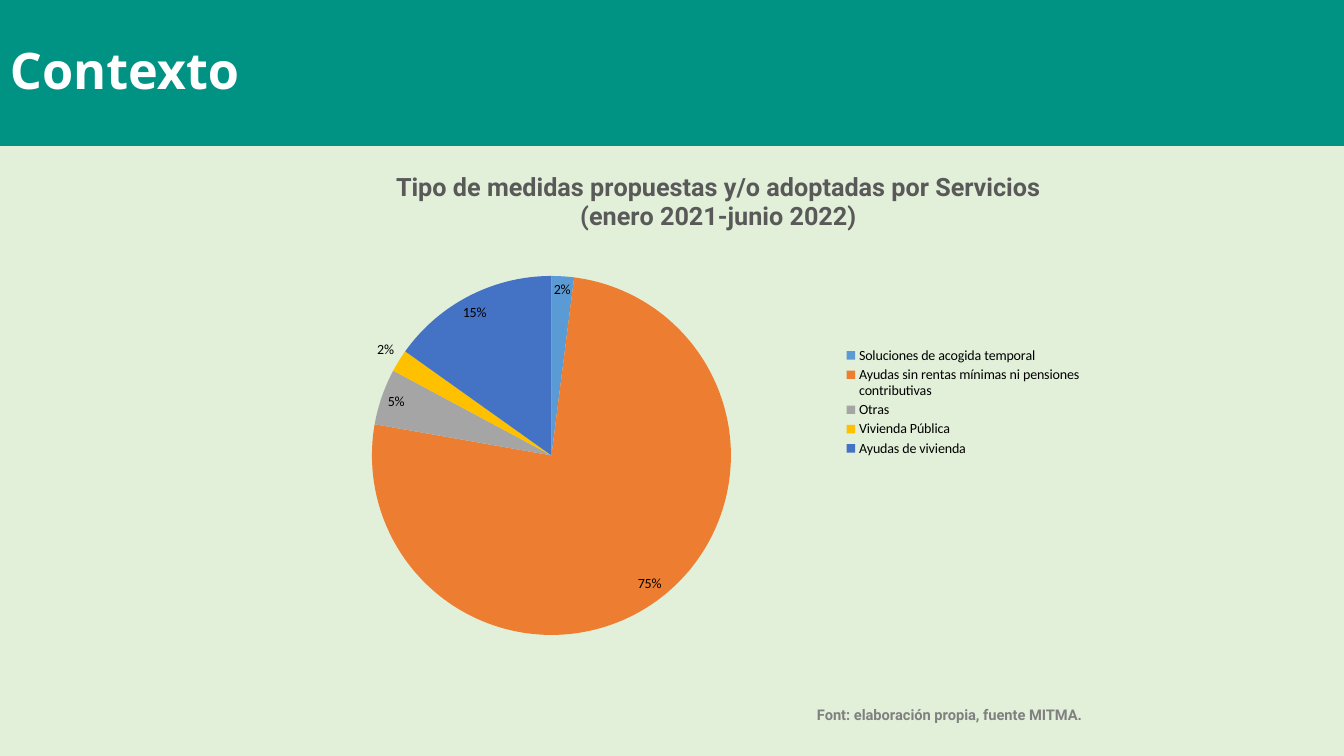
from lxml import etree
from pptx import Presentation
from pptx.chart.data import CategoryChartData
from pptx.dml.color import RGBColor
from pptx.enum.chart import XL_CHART_TYPE, XL_LABEL_POSITION, XL_LEGEND_POSITION
from pptx.enum.shapes import MSO_SHAPE
from pptx.enum.text import MSO_ANCHOR, PP_ALIGN
from pptx.oxml.ns import qn
from pptx.util import Emu, Pt

PIE = XL_CHART_TYPE.PIE
BEST_FIT = XL_LABEL_POSITION.BEST_FIT
RIGHT = XL_LEGEND_POSITION.RIGHT
RECTANGLE = MSO_SHAPE.RECTANGLE
MIDDLE = MSO_ANCHOR.MIDDLE
LEFT, CENTER = PP_ALIGN.LEFT, PP_ALIGN.CENTER

PALE_GREEN = RGBColor(0xE2, 0xF0, 0xD9)
TEAL = RGBColor(0x00, 0x93, 0x83)
WHITE = RGBColor(0xFF, 0xFF, 0xFF)
BLACK = RGBColor(0x00, 0x00, 0x00)
GRAY = RGBColor(0x80, 0x80, 0x80)
DARK_GRAY = RGBColor(0x59, 0x59, 0x59)
BLUE = RGBColor(0x5B, 0x9B, 0xD5)
ORANGE = RGBColor(0xED, 0x7D, 0x31)
SILVER = RGBColor(0xA5, 0xA5, 0xA5)
YELLOW = RGBColor(0xFF, 0xC0, 0x00)
ROYAL_BLUE = RGBColor(0x44, 0x72, 0xC4)

SLIDE_W, SLIDE_H = 1344, 756
CHART_X, CHART_Y, CHART_W, CHART_H = 255, 156, 834, 492
EMU_PER_PX = 12192000 / SLIDE_W

MEASURES = [
    ("Soluciones de acogida temporal", 2, BLUE),
    ("Ayudas sin rentas mínimas ni pensiones contributivas", 75, ORANGE),
    ("Otras", 5, SILVER),
    ("Vivienda Pública ", 2, YELLOW),
    ("Ayudas de vivienda", 15, ROYAL_BLUE),
]


def px(*lengths):
    return [Emu(round(length * EMU_PER_PX)) for length in lengths]


def write(frame, text, font, size, color, align=LEFT, spacing=None):
    for index, line in enumerate(text.split("\n")):
        paragraph = frame.add_paragraph() if index else frame.paragraphs[0]
        paragraph.alignment = align
        paragraph.line_spacing = spacing
        run = paragraph.add_run()
        run.text = line
        run.font.name = font
        run.font.size = Pt(size)
        run.font.bold = True
        run.font.color.rgb = color


deck = Presentation()
deck.slide_width, deck.slide_height = px(SLIDE_W, SLIDE_H)
slide = deck.slides.add_slide(deck.slide_layouts[6])
slide.background.fill.solid()
slide.background.fill.fore_color.rgb = PALE_GREEN

heading = slide.shapes.add_shape(RECTANGLE, *px(0, 0, SLIDE_W, 146))
heading.shadow.inherit = False
heading.fill.solid()
heading.fill.fore_color.rgb = TEAL
heading.line.fill.background()
heading.text_frame.vertical_anchor = MIDDLE
write(heading.text_frame, "Contexto", "Open Sans", 36, WHITE, spacing=0.9)

source_note = slide.shapes.add_textbox(*px(807, 701, 318, 28)).text_frame
source_note.word_wrap = True
write(source_note, "Font: elaboración propia, fuente MITMA.", "Roboto", 10.5, GRAY)

names, shares, colors = zip(*MEASURES)
data = CategoryChartData(number_format='0"%"')
data.categories = names
data.add_series("Series 1", shares)
chart = slide.shapes.add_chart(PIE, *px(CHART_X, CHART_Y, CHART_W, CHART_H), data).chart
chart.font.name = "Calibri"
chart.font.size = Pt(10)
chart.font.color.rgb = BLACK

chart.has_title = True
write(chart.chart_title.text_frame,
      "Tipo de medidas propuestas y/o adoptadas por Servicios\n(enero 2021-junio 2022)",
      "Roboto", 18, DARK_GRAY, align=CENTER)
chart.chart_title.include_in_layout = False
chart.has_legend = True
chart.legend.position = RIGHT
chart.legend.include_in_layout = False

pie = chart.plots[0]
pie.vary_by_categories = True
pie.has_data_labels = True
labels = pie.data_labels
labels.show_value = True
labels.show_percentage = False
labels.number_format = '0"%"'
labels.number_format_is_linked = False
labels.position = BEST_FIT
for index, color in enumerate(colors):
    slice_fill = pie.series[0].points[index].format.fill
    slice_fill.solid()
    slice_fill.fore_color.rgb = color

chart_xml = chart._chartSpace.chart
placements = [
    (chart_xml.find(qn("c:title")), (393, 168), False),
    (chart_xml.plotArea, (372, 276, 359, 359), True),
    (chart_xml.find(qn("c:legend")), (838, 344, 250, 116), False),
]
for part, box, inner in placements:
    for old_layout in part.findall(qn("c:layout")):
        part.remove(old_layout)
    layout = etree.Element(qn("c:layout"))
    manual = etree.SubElement(layout, qn("c:manualLayout"))
    if inner:
        etree.SubElement(manual, qn("c:layoutTarget")).set("val", "inner")
    for mode in ("xMode", "yMode"):
        etree.SubElement(manual, qn("c:" + mode)).set("val", "edge")
    fractions = zip("xywh", box, (CHART_X, CHART_Y, 0, 0), (CHART_W, CHART_H) * 2)
    for side, length, start, whole in fractions:
        etree.SubElement(manual, qn("c:" + side)).set("val", f"{(length - start) / whole:.4f}")
    part.insert(0 if inner else 1, layout)

deck.save("out.pptx")
